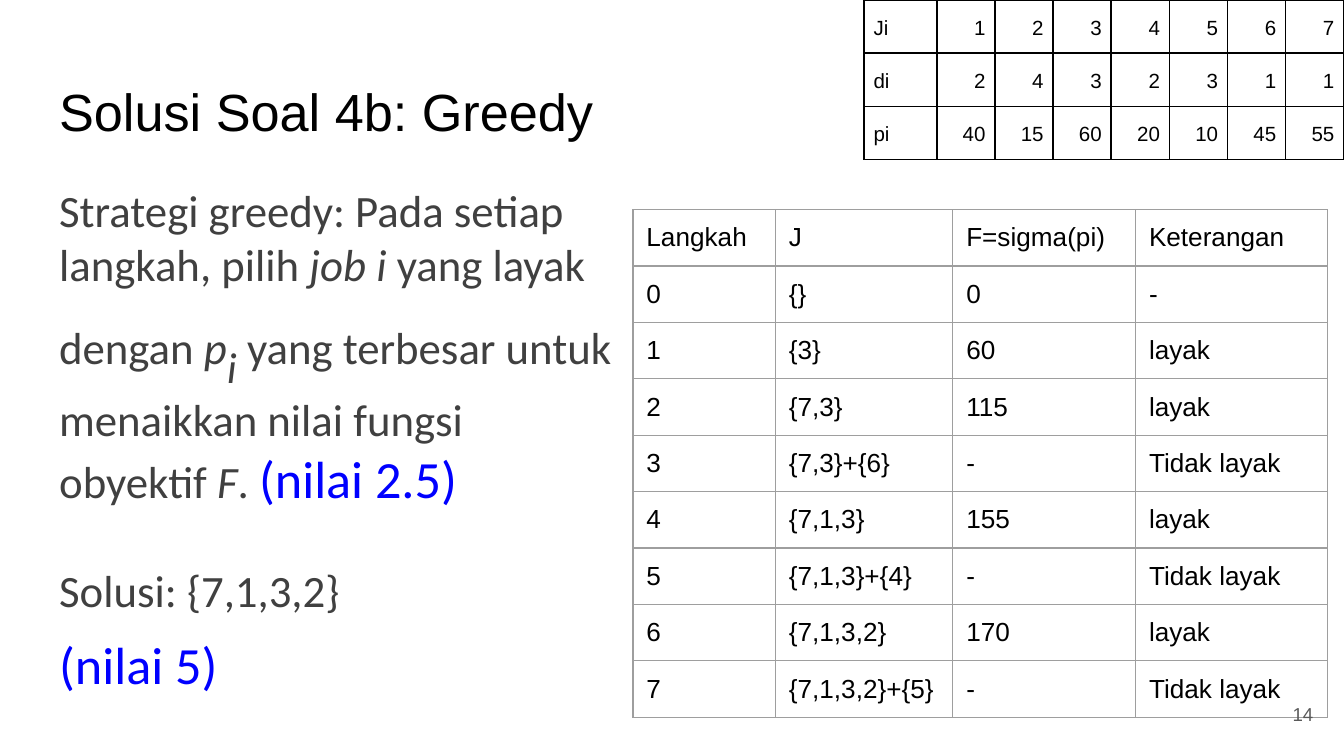
from dataclasses import dataclass

import pptx
import pptx.dml.color
import pptx.enum.text
import pptx.oxml
import pptx.oxml.ns
import pptx.util

Inches = pptx.util.Inches
Pt = pptx.util.Pt
Align = pptx.enum.text.PP_ALIGN
Anchor = pptx.enum.text.MSO_ANCHOR

COLORS = {
    "text": "000000",
    "body": "404040",
    "score": "0000FF",
    "grid": "9E9E9E",
    "number": "595959",
}


@dataclass
class Piece:
    text: str
    size: float = 24
    color: str = "body"
    italic: bool = False
    baseline: int = 0


@dataclass
class BodyParagraph:
    pieces: list[Piece]
    before: float = 0
    after: float = 0
    spacing: float = 1.0


@dataclass
class TableSpec:
    left: float
    top: float
    columns: list[float]
    row_height: float
    rows: list[list[str]]
    size: float
    border: str
    border_width: float
    side_margin: float = 0.1
    numeric: bool = False


BODY = [
    BodyParagraph([
        Piece("Strategi greedy: Pada setiap langkah, pilih "),
        Piece("job i", italic=True),
        Piece(" yang layak dengan "),
        Piece("p", italic=True),
        Piece("i", size=40, italic=True, baseline=-25),
        Piece(" yang terbesar untuk menaikkan nilai fungsi obyektif "),
        Piece("F", italic=True),
        Piece(". "),
        Piece("(nilai 2.5)", size=28, color="score"),
    ]),
    BodyParagraph([Piece("Solusi: {7,1,3,2}")], before=29),
    BodyParagraph([Piece("(nilai 5)", size=28, color="score")],
                  before=12, after=2, spacing=0.9),
]

JOBS = TableSpec(
    left=6.43, top=0, columns=[0.54] + [(10 - 6.43 - 0.54) / 7] * 7,
    row_height=0.37,
    rows=[
        ["Ji", "1", "2", "3", "4", "5", "6", "7"],
        ["di", "2", "4", "3", "2", "3", "1", "1"],
        ["pi", "40", "15", "60", "20", "10", "45", "55"],
    ],
    size=11, border="text", border_width=1, side_margin=0.07, numeric=True,
)

STEPS = TableSpec(
    left=4.71, top=1.56, columns=[1.06, 1.32, 1.36, 1.43], row_height=0.42,
    rows=[
        ["Langkah", "J", "F=sigma(pi)", "Keterangan"],
        ["0", "{}", "0", "-"],
        ["1", "{3}", "60", "layak"],
        ["2", "{7,3}", "115", "layak"],
        ["3", "{7,3}+{6}", "-", "Tidak layak"],
        ["4", "{7,1,3}", "155", "layak"],
        ["5", "{7,1,3}+{4}", "-", "Tidak layak"],
        ["6", "{7,1,3,2}", "170", "layak"],
        ["7", "{7,1,3,2}+{5}", "-", "Tidak layak"],
    ],
    size=14, border="grid", border_width=0.75,
)


def format_font(font, name: str, size: float, color: str) -> None:
    font.name = name
    font.size = Pt(size)
    font.color.rgb = pptx.dml.color.RGBColor.from_string(COLORS[color])


def place(shape, left: float, top: float, width: float, height: float,
          anchor=Anchor.TOP) -> None:
    """Position a text shape and give its frame even margins."""
    shape.left, shape.top = Inches(left), Inches(top)
    shape.width, shape.height = Inches(width), Inches(height)
    frame = shape.text_frame
    frame.word_wrap = True
    frame.auto_size = pptx.enum.text.MSO_AUTO_SIZE.NONE
    frame.vertical_anchor = anchor
    frame.margin_left = frame.margin_right = Inches(0.1)
    frame.margin_top = frame.margin_bottom = Inches(0.1)


def write_line(shape, text: str, size: float, color: str, align) -> None:
    shape.text_frame.text = text
    paragraph = shape.text_frame.paragraphs[0]
    paragraph.alignment = align
    format_font(paragraph.runs[0].font, "Arial", size, color)


def write_body(frame, paragraphs: list[BodyParagraph]) -> None:
    for index, content in enumerate(paragraphs):
        paragraph = frame.add_paragraph() if index else frame.paragraphs[0]
        properties = paragraph._p.get_or_add_pPr()
        properties.set("marL", "0")
        properties.set("indent", "0")
        properties.append(pptx.oxml.parse_xml(
            f'<a:buNone {pptx.oxml.ns.nsdecls("a")}/>'))
        paragraph.alignment = Align.LEFT
        paragraph.line_spacing = content.spacing
        paragraph.space_before = Pt(content.before)
        paragraph.space_after = Pt(content.after)
        for piece in content.pieces:
            run = paragraph.add_run()
            run.text = piece.text
            format_font(run.font, "Calibri", piece.size, piece.color)
            run.font.italic = piece.italic
            if piece.baseline:
                run._r.get_or_add_rPr().set("baseline", str(piece.baseline * 1000))


def set_borders(cell, color: str, width: float) -> None:
    properties = cell._tc.get_or_add_tcPr()
    for side in ("lnL", "lnR", "lnT", "lnB"):
        properties.append(pptx.oxml.parse_xml(
            f'<a:{side} {pptx.oxml.ns.nsdecls("a")} w="{Pt(width)}"><a:solidFill>'
            f'<a:srgbClr val="{COLORS[color]}"/></a:solidFill></a:{side}>'))


def draw_table(slide, spec: TableSpec) -> None:
    table = slide.shapes.add_table(
        len(spec.rows), len(spec.columns), Inches(spec.left), Inches(spec.top),
        Inches(sum(spec.columns)), Inches(spec.row_height * len(spec.rows))).table
    table.first_row = table.horz_banding = False
    for column, width in zip(table.columns, spec.columns):
        column.width = Inches(width)
    for row_index, values in enumerate(spec.rows):
        table.rows[row_index].height = Inches(spec.row_height)
        for column_index, value in enumerate(values):
            cell = table.cell(row_index, column_index)
            cell.margin_left = cell.margin_right = Inches(spec.side_margin)
            cell.margin_top = cell.margin_bottom = Inches(0.1)
            set_borders(cell, spec.border, spec.border_width)
            cell.fill.background()
            cell.text_frame.text = value
            paragraph = cell.text_frame.paragraphs[0]
            if spec.numeric:
                paragraph.line_spacing = 1.15
                paragraph.alignment = Align.RIGHT if column_index else Align.JUSTIFY
            format_font(paragraph.runs[0].font, "Arial", spec.size, "text")


def main() -> None:
    presentation = pptx.Presentation()
    presentation.slide_width = Inches(10)
    presentation.slide_height = presentation.slide_width * 9 // 16
    slide = presentation.slides.add_slide(presentation.slide_layouts[1])

    title, body = slide.placeholders
    place(title, 0.34, 0.49, 9.32, 0.63)
    write_line(title, "Solusi Soal 4b: Greedy", 28, "text", Align.LEFT)
    place(body, 0.34, 1.26, 4.37, 3.74)
    write_body(body.text_frame, BODY)

    for spec in (JOBS, STEPS):
        draw_table(slide, spec)

    number = slide.shapes.add_textbox(0, 0, 0, 0)
    place(number, 9.27, 5.1, 0.6, 0.43, Anchor.MIDDLE)
    write_line(number, "14", 10, "number", Align.RIGHT)

    presentation.save("out.pptx")


if __name__ == "__main__":
    main()
